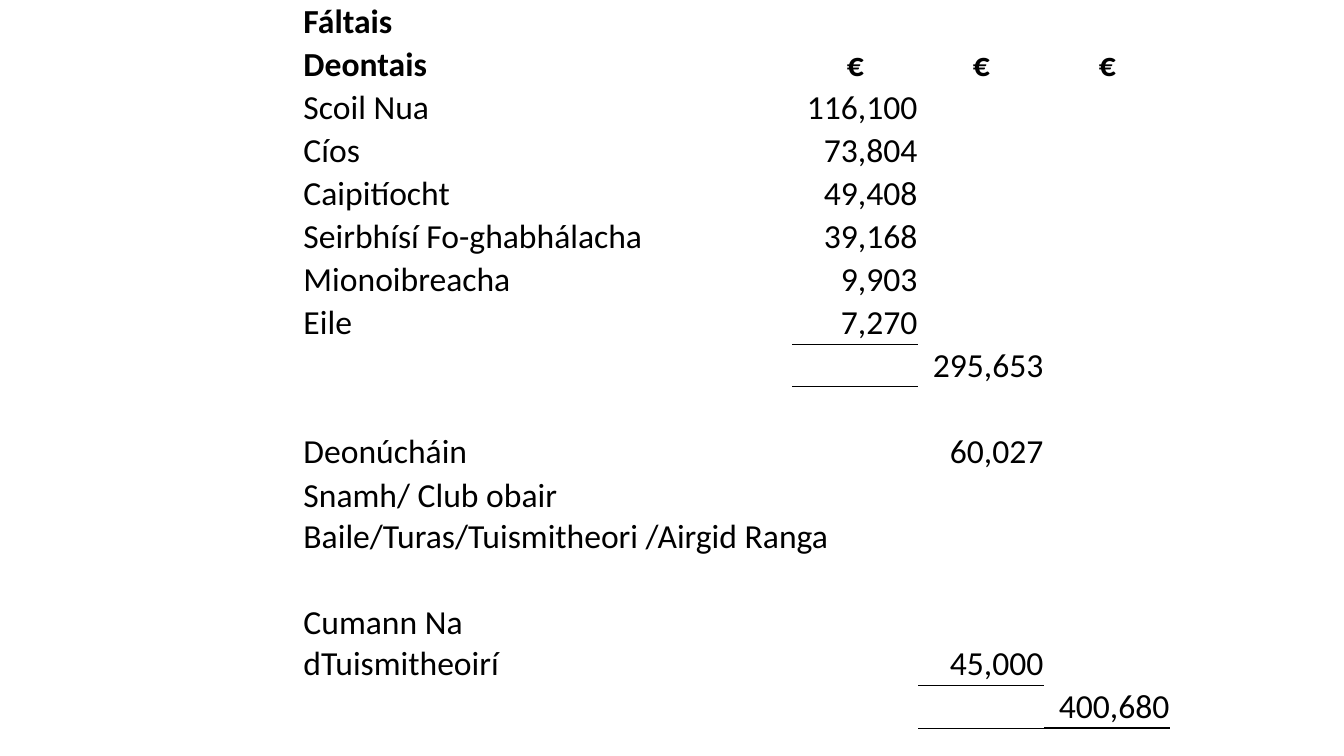
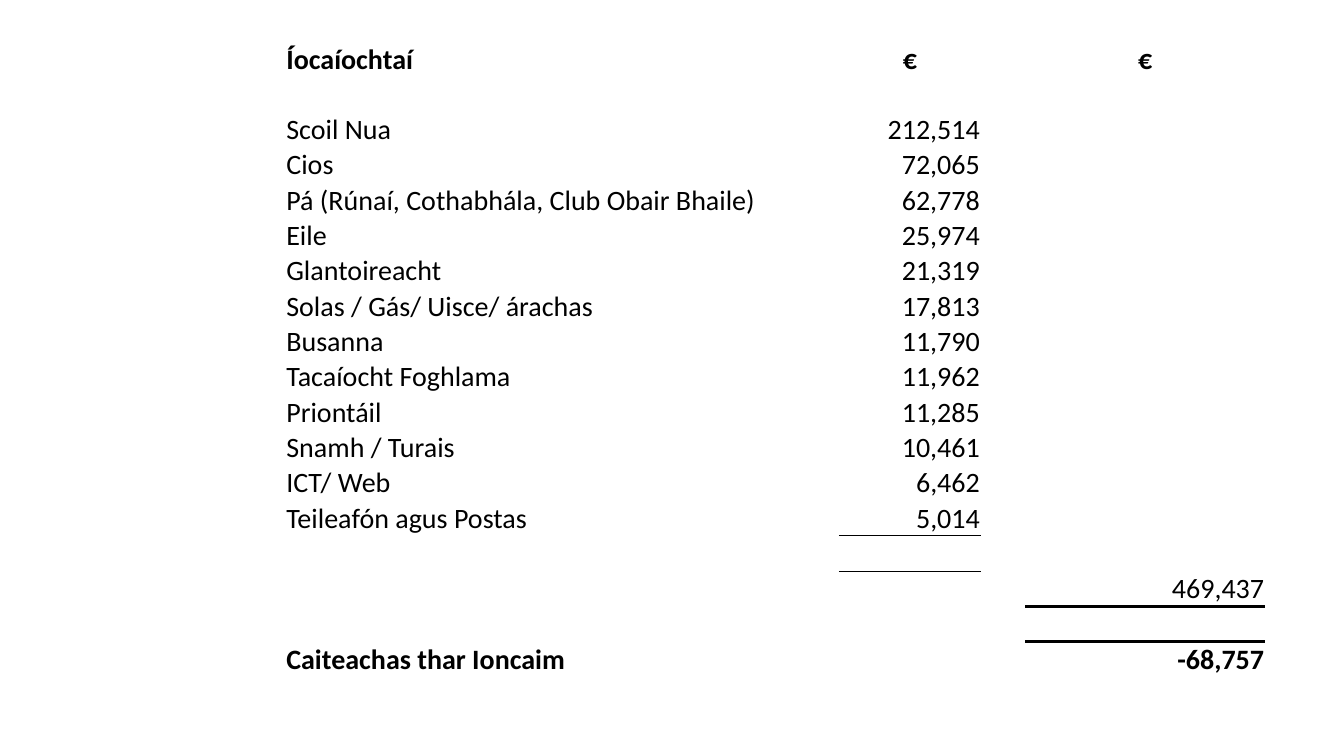
from dataclasses import dataclass

from lxml.etree import SubElement
from pptx import Presentation
from pptx.dml.color import RGBColor
from pptx.enum.text import MSO_ANCHOR, PP_ALIGN
from pptx.oxml import parse_xml
from pptx.oxml.ns import nsdecls, qn
from pptx.util import Inches, Pt


@dataclass(frozen=True)
class Theme:
    font: str = "Calibri"
    ink: str = "000000"
    receipts_size: int = 24
    payments_size: int = 20
    empty_size: int = 10
    thin_rule: float = 0.5
    thick_rule: float = 2
    plain_table: str = "{2D5ABB26-0587-4C30-8999-92F81FD0307C}"


THEME = Theme()
BLANK_LAYOUT = 6
EMPTY_ROW = ("", 1, {}, False)

RECEIPTS = {
    "place": (3, 0, 7.65),
    "columns": [2.35, 1.19, 0.05, 1.26, 1.25, 1.25, 1.25],
    "special_heights": {11: 0.84, 13: 0.84},
    "size": THEME.receipts_size,
    "rows": [
        ("Fáltais", 1, {}, True),
        ("Deontais", 1, {4: "€", 5: "€", 6: "€"}, True),
        ("Scoil Nua", 1, {4: "116,100"}, False),
        ("Cíos", 1, {4: "73,804"}, False),
        ("Caipitíocht", 1, {4: "49,408"}, False),
        ("Seirbhísí Fo-ghabhálacha", 3, {4: "39,168"}, False),
        ("Mionoibreacha", 1, {4: "9,903"}, False),
        ("Eile", 1, {4: "7,270"}, False),
        ("", 1, {5: "295,653"}, False),
        EMPTY_ROW,
        ("Deonúcháin", 1, {5: "60,027"}, False),
        ("Snamh/ Club obair Baile/Turas/Tuismitheori /Airgid Ranga", 5, {}, False),
        EMPTY_ROW,
        ("Cumann Na dTuismitheoirí", 3, {5: "45,000"}, False),
        ("", 1, {6: "400,680"}, False),
        EMPTY_ROW,
    ],
    "rules": [(7, 4, THEME.thin_rule), (13, 5, THEME.thin_rule), (14, 6, THEME.thick_rule)],
}

PAYMENTS = {
    "place": (2.83, 0.41, 6.53),
    "columns": [2.67, 1.41, 1.41, 1.41, 0.44, 2.38],
    "special_heights": {18: 0.23},
    "size": THEME.payments_size,
    "rows": [
        ("Íocaíochtaí", 1, {3: "€", 5: "€"}, True),
        EMPTY_ROW,
        ("Scoil Nua", 1, {3: "212,514"}, False),
        ("Cios", 1, {3: "72,065"}, False),
        ("Pá (Rúnaí, Cothabhála, Club Obair Bhaile)", 3, {3: "62,778"}, False),
        ("Eile", 1, {3: "25,974"}, False),
        ("Glantoireacht", 1, {3: "21,319"}, False),
        ("Solas / Gás/ Uisce/ árachas", 2, {3: "17,813"}, False),
        ("Busanna", 1, {3: "11,790"}, False),
        ("Tacaíocht Foghlama", 1, {3: "11,962"}, False),
        ("Priontáil", 1, {3: "11,285"}, False),
        ("Snamh / Turais", 1, {3: "10,461"}, False),
        ("ICT/ Web", 1, {3: "6,462"}, False),
        ("Teileafón agus Postas", 1, {3: "5,014"}, False),
        EMPTY_ROW,
        ("", 1, {5: "469,437"}, False),
        EMPTY_ROW,
        ("Caiteachas thar Ioncaim", 2, {5: "-68,757"}, True),
        EMPTY_ROW,
    ],
    "rules": [(13, 3, THEME.thin_rule), (15, 5, THEME.thick_rule)],
}


def format_cell(cell):
    cell.margin_left = cell.margin_right = cell.margin_top = Inches(0.01)
    cell.margin_bottom = 0
    cell.vertical_anchor = MSO_ANCHOR.BOTTOM
    cell.fill.background()


def write_cell(cell, text, size, bold, alignment):
    paragraph = cell.text_frame.paragraphs[0]
    if not text:
        end = SubElement(paragraph._p, qn("a:endParaRPr"))
        end.set("sz", str(THEME.empty_size * 100))
        return
    paragraph.alignment = alignment
    run = paragraph.add_run()
    run.text = text
    run.font.name = THEME.font
    run.font.size = Pt(size)
    run.font.bold = bold
    run.font.color.rgb = RGBColor.from_string(THEME.ink)


def add_rule(cell, side, width):
    line = parse_xml(
        f'<a:{side} {nsdecls("a")} w="{Pt(width)}"><a:solidFill>'
        f'<a:srgbClr val="{THEME.ink}"/></a:solidFill></a:{side}>'
    )
    cell._tc.get_or_add_tcPr().insert(0, line)


def add_account(presentation, account):
    slide = presentation.slides.add_slide(presentation.slide_layouts[BLANK_LAYOUT])
    left, top, height = account["place"]
    rows, columns = account["rows"], account["columns"]
    special = account["special_heights"]
    row_height = (height - sum(special.values())) / (len(rows) - len(special))

    frame = slide.shapes.add_table(
        len(rows), len(columns),
        Inches(left), Inches(top), Inches(sum(columns)), Inches(height),
    )
    table = frame.table
    table.first_row = table.horz_banding = False
    table._tbl.tblPr.find(qn("a:tableStyleId")).text = THEME.plain_table
    for column, width in zip(table.columns, columns):
        column.width = Inches(width)

    for row_index, (label, span, amounts, bold) in enumerate(rows):
        table.rows[row_index].height = Inches(special.get(row_index, row_height))
        for column_index in range(len(columns)):
            cell = table.cell(row_index, column_index)
            format_cell(cell)
            text = amounts.get(column_index, "") if column_index else label
            if column_index == 0:
                alignment = PP_ALIGN.LEFT
            else:
                alignment = PP_ALIGN.CENTER if text == "€" else PP_ALIGN.RIGHT
            write_cell(cell, text, account["size"], bold, alignment)
        if span > 1:
            table.cell(row_index, 0).merge(table.cell(row_index, span - 1))

    for row_index, column_index, width in account["rules"]:
        add_rule(table.cell(row_index, column_index), "lnB", width)
        add_rule(table.cell(row_index + 1, column_index), "lnT", width)


def main():
    presentation = Presentation()
    presentation.slide_width = Inches(13.33)
    presentation.slide_height = Inches(7.5)
    for account in (RECEIPTS, PAYMENTS):
        add_account(presentation, account)
    presentation.save("out.pptx")


if __name__ == "__main__":
    main()
